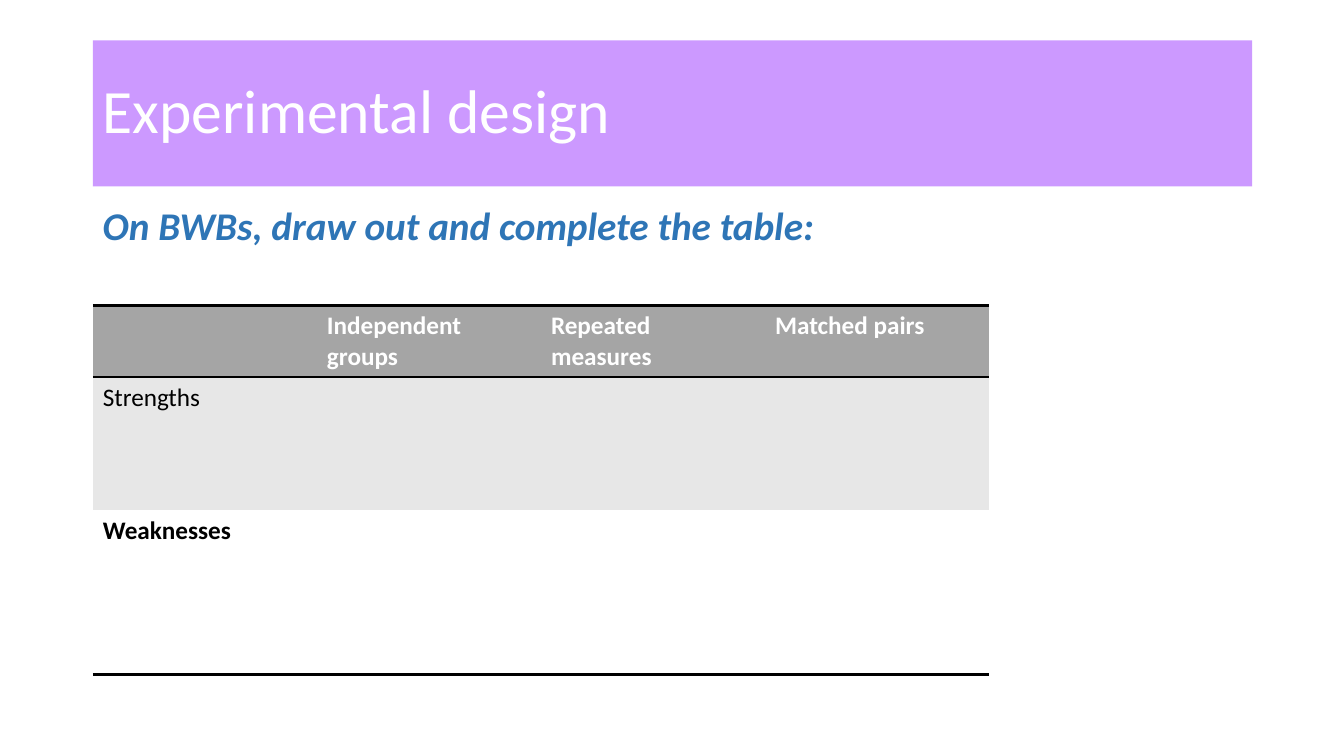
from lxml import etree
from pptx import Presentation
from pptx.dml.color import RGBColor
from pptx.enum.text import MSO_ANCHOR, MSO_AUTO_SIZE, PP_ALIGN
from pptx.oxml.ns import qn
from pptx.util import Inches, Pt

LEFT = PP_ALIGN.LEFT
MIDDLE = MSO_ANCHOR.MIDDLE
NO_FIT = MSO_AUTO_SIZE.NONE
TITLE_ONLY = 5
FONT = "Calibri"
ROWS = [
    ["", "Independent groups", "Repeated measures", "Matched pairs"],
    ["Strengths", "", "", ""],
    ["Weaknesses", "", "", ""],
]
ROW_HEIGHTS = [0.71, 1.32, 1.63]
ROW_FILLS = ["A5A5A5", "E7E7E7", "FFFFFF"]
ROW_COLORS = ["FFFFFF", "000000", "000000"]
ROW_BOLD = [True, False, True]
RULES = [2, 2, 0, 2]


def rgb(value):
    """Return the colour for a hex string."""
    return RGBColor.from_string(value)


def add_run(p, text, size, color, bold=False, italic=False):
    """Add one formatted run to a paragraph."""
    r = p.add_run()
    r.text = text
    r.font.name = FONT
    r.font.size = Pt(size)
    r.font.bold = bold
    r.font.italic = italic
    r.font.color.rgb = rgb(color)


def place(sp, box):
    """Move and size a shape to a box given in inches."""
    sp.left, sp.top, sp.width, sp.height = (Inches(v) for v in box)


def add_title(s, box):
    """Format the title placeholder as a filled banner."""
    sp = s.shapes.title
    place(sp, box)
    sp.fill.solid()
    sp.fill.fore_color.rgb = rgb("CC99FF")
    tf = sp.text_frame
    tf.auto_size = NO_FIT
    tf.vertical_anchor = MIDDLE
    p = tf.paragraphs[0]
    p.alignment = LEFT
    p.line_spacing = 0.9
    add_run(p, "Experimental design", 44, "FFFFFF")


def add_task(s, box):
    """Add the task instruction."""
    tf = s.shapes.add_textbox(*(Inches(v) for v in box)).text_frame
    tf.word_wrap = True
    p = tf.paragraphs[0]
    p.line_spacing = 0.9
    p.space_before = Pt(10)
    add_run(p, "On BWBs, draw out and complete the table:", 28, "2E75B6", True, True)


def set_border(cell, side, width):
    """Draw one cell edge in black, or clear it when the width is zero."""
    ln = etree.SubElement(cell._tc.get_or_add_tcPr(), qn(f"a:ln{side}"))
    if width:
        ln.set("w", str(Pt(width)))
        fill = etree.SubElement(ln, qn("a:solidFill"))
        etree.SubElement(fill, qn("a:srgbClr"), val="000000")
    else:
        etree.SubElement(ln, qn("a:noFill"))


def add_design_table(s, box):
    """Add the table of strengths and weaknesses."""
    shape = s.shapes.add_table(len(ROWS), len(ROWS[0]), *(Inches(v) for v in box))
    table = shape.table
    for i, texts in enumerate(ROWS):
        table.rows[i].height = Inches(ROW_HEIGHTS[i])
        for j, text in enumerate(texts):
            cell = table.cell(i, j)
            edges = {"L": 0, "R": 0, "T": RULES[i], "B": RULES[i + 1]}
            for side, width in edges.items():
                set_border(cell, side, width)
            cell.fill.solid()
            cell.fill.fore_color.rgb = rgb(ROW_FILLS[i])
            if text:
                p = cell.text_frame.paragraphs[0]
                add_run(p, text, 18, ROW_COLORS[i], ROW_BOLD[i])


def main():
    """Build the slide and save it."""
    prs = Presentation()
    prs.slide_width = Inches(13.33)
    prs.slide_height = Inches(7.5)
    s = prs.slides.add_slide(prs.slide_layouts[TITLE_ONLY])
    add_task(s, (0.92, 2, 11.5, 0.63))
    add_title(s, (0.92, 0.4, 11.5, 1.45))
    add_design_table(s, (0.92, 3.03, 8.89, sum(ROW_HEIGHTS)))
    prs.save("out.pptx")


if __name__ == "__main__":
    main()
